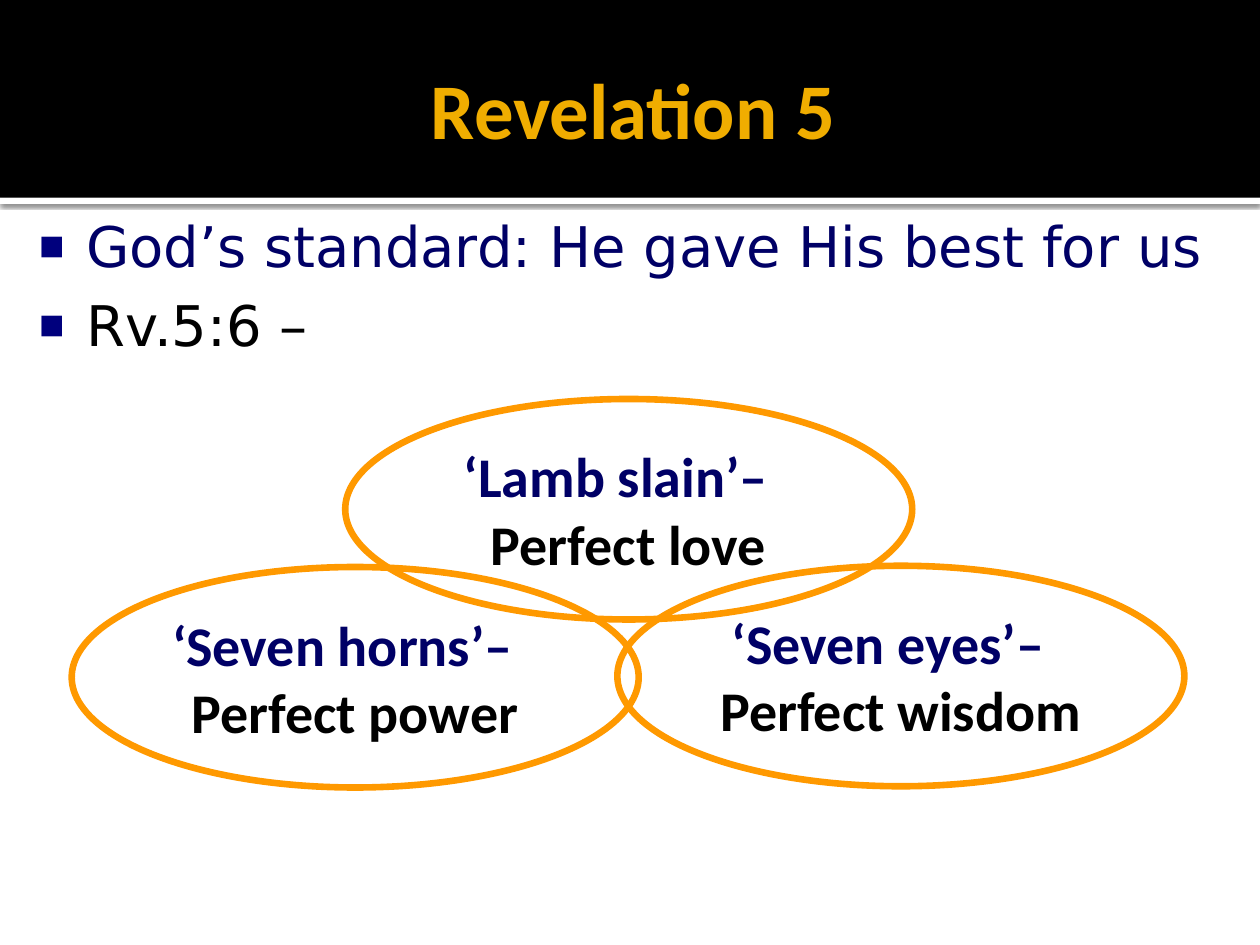
from dataclasses import dataclass

from lxml import etree
from pptx import Presentation
from pptx.dml.color import RGBColor
from pptx.enum import shapes, text
from pptx.oxml import ns
from pptx.util import Pt


@dataclass(frozen=True)
class Theme:
    white: str = "FFFFFF"
    black: str = "000000"
    gold: str = "F0AD00"
    navy: str = "000066"
    bullet: str = "00007D"
    orange: str = "FF9900"
    heading_font: str = "Calibri"
    body_font: str = "DejaVu Sans"
    title_size: float = 45
    text_size: float = 32
    bullet_percent: int = 48


@dataclass(frozen=True)
class Attribute:
    symbol: str
    meaning: str
    left: float
    top: float


THEME = Theme()
SLIDE_W, SLIDE_H = 720, 540
HEADER_H = 113
RULE_H = 3.6
OVAL_W, OVAL_H = 324, 126
HANGING = 27
SYMBOL_SHIFT = 14.4

POINTS = [
    ("God’s standard: He gave His best for us", THEME.navy),
    ("Rv.5:6 –", THEME.black),
]
ATTRIBUTES = [
    Attribute("‘Lamb slain’–", "Perfect love", 197.3, 228),
    Attribute("‘Seven eyes’–", "Perfect wisdom", 352.8, 323.3),
    Attribute("‘Seven horns’–", "Perfect power", 41, 324),
]


def add_run(paragraph, words: str, font: str, size: float, color: str, bold: bool) -> None:
    run = paragraph.add_run()
    run.text = words
    run.font.name = font
    run.font.size = Pt(size)
    run.font.bold = bold
    run.font.color.rgb = RGBColor.from_string(color)


def place(shape, left: float, top: float, width: float, height: float) -> None:
    shape.left, shape.top = Pt(left), Pt(top)
    shape.width, shape.height = Pt(width), Pt(height)


def set_insets(frame, left: float, top: float, right: float, bottom: float) -> None:
    frame.margin_left, frame.margin_top = Pt(left), Pt(top)
    frame.margin_right, frame.margin_bottom = Pt(right), Pt(bottom)


def add_element(parent, tag: str, **attributes: str):
    return etree.SubElement(parent, ns.qn(tag), attributes)


def add_band(slide, top: float, height: float, color: str, layer: int):
    """Add a full-width band at the given layer, behind the placeholders."""
    band = slide.shapes.add_shape(
        shapes.MSO_SHAPE.RECTANGLE, 0, Pt(top), Pt(SLIDE_W), Pt(height))
    band.shadow.inherit = False
    band.fill.solid()
    band.fill.fore_color.rgb = RGBColor.from_string(color)
    band.line.fill.background()
    tree = band.element.getparent()
    tree.remove(band.element)
    tree.insert(2 + layer, band.element)
    return band


def add_drop_shadow(shape) -> None:
    effects = shape.element.spPr.find(ns.qn("a:effectLst"))
    shadow = add_element(effects, "a:outerShdw", blurRad=str(Pt(2.5)), dist=str(Pt(0.8)),
                         dir="5400000", algn="tl", rotWithShape="0")
    color = add_element(shadow, "a:srgbClr", val=THEME.black)
    add_element(color, "a:alpha", val="60000")


def add_square_bullet(paragraph) -> None:
    properties = paragraph._p.get_or_add_pPr()
    properties.set("marL", str(Pt(HANGING)))
    properties.set("indent", str(Pt(-HANGING)))
    color = add_element(properties, "a:buClr")
    add_element(color, "a:srgbClr", val=THEME.bullet)
    add_element(properties, "a:buSzPct", val=str(THEME.bullet_percent * 1000))
    add_element(properties, "a:buFont", typeface=THEME.body_font)
    add_element(properties, "a:buChar", char="■")


def fill_title(title) -> None:
    place(title, 36, 12.2, 648, 98.6)
    frame = title.text_frame
    set_insets(frame, 7.2, 3.6, 3.6, 3.6)
    frame.vertical_anchor = text.MSO_ANCHOR.MIDDLE
    heading = frame.paragraphs[0]
    heading.alignment = text.PP_ALIGN.CENTER
    add_run(heading, "Revelation 5", THEME.heading_font, THEME.title_size, THEME.gold, True)


def fill_points(body) -> None:
    place(body, 18, 113.8, 684, 408)
    frame = body.text_frame
    set_insets(frame, 4.3, 7.2, 7.2, 3.6)
    for index, (words, color) in enumerate(POINTS):
        point = frame.add_paragraph() if index else frame.paragraphs[0]
        add_square_bullet(point)
        point.space_before = Pt(6.4 if index else 0)
        add_run(point, words, THEME.body_font, THEME.text_size, color, False)


def add_attribute(slide, attribute: Attribute) -> None:
    """Draw an oval whose symbol line sits slightly left of its centred meaning."""
    oval = slide.shapes.add_shape(
        shapes.MSO_SHAPE.OVAL, Pt(attribute.left), Pt(attribute.top), Pt(OVAL_W), Pt(OVAL_H))
    oval.shadow.inherit = False
    oval.fill.background()
    oval.line.color.rgb = RGBColor.from_string(THEME.orange)
    oval.line.width = Pt(3.78)
    frame = oval.text_frame
    frame.word_wrap = True
    frame.vertical_anchor = text.MSO_ANCHOR.MIDDLE
    set_insets(frame, 0, 3.6, 0, 3.6)
    lines = [(attribute.symbol, THEME.navy, SYMBOL_SHIFT),
             (attribute.meaning, THEME.black, 0)]
    for index, (words, color, right_margin) in enumerate(lines):
        line = frame.add_paragraph() if index else frame.paragraphs[0]
        line._p.get_or_add_pPr().set("marR", str(Pt(right_margin)))
        line.alignment = text.PP_ALIGN.CENTER
        add_run(line, words, THEME.heading_font, THEME.text_size, color, True)


def main() -> None:
    deck = Presentation()
    deck.slide_width, deck.slide_height = Pt(SLIDE_W), Pt(SLIDE_H)
    slide = deck.slides.add_slide(deck.slide_layouts[1])
    rule = add_band(slide, HEADER_H, RULE_H, THEME.white, 0)
    add_drop_shadow(rule)
    add_band(slide, 0, HEADER_H, THEME.black, 1)
    fill_title(slide.shapes.title)
    fill_points(slide.placeholders[1])
    for attribute in ATTRIBUTES:
        add_attribute(slide, attribute)
    deck.save("out.pptx")


if __name__ == "__main__":
    main()
